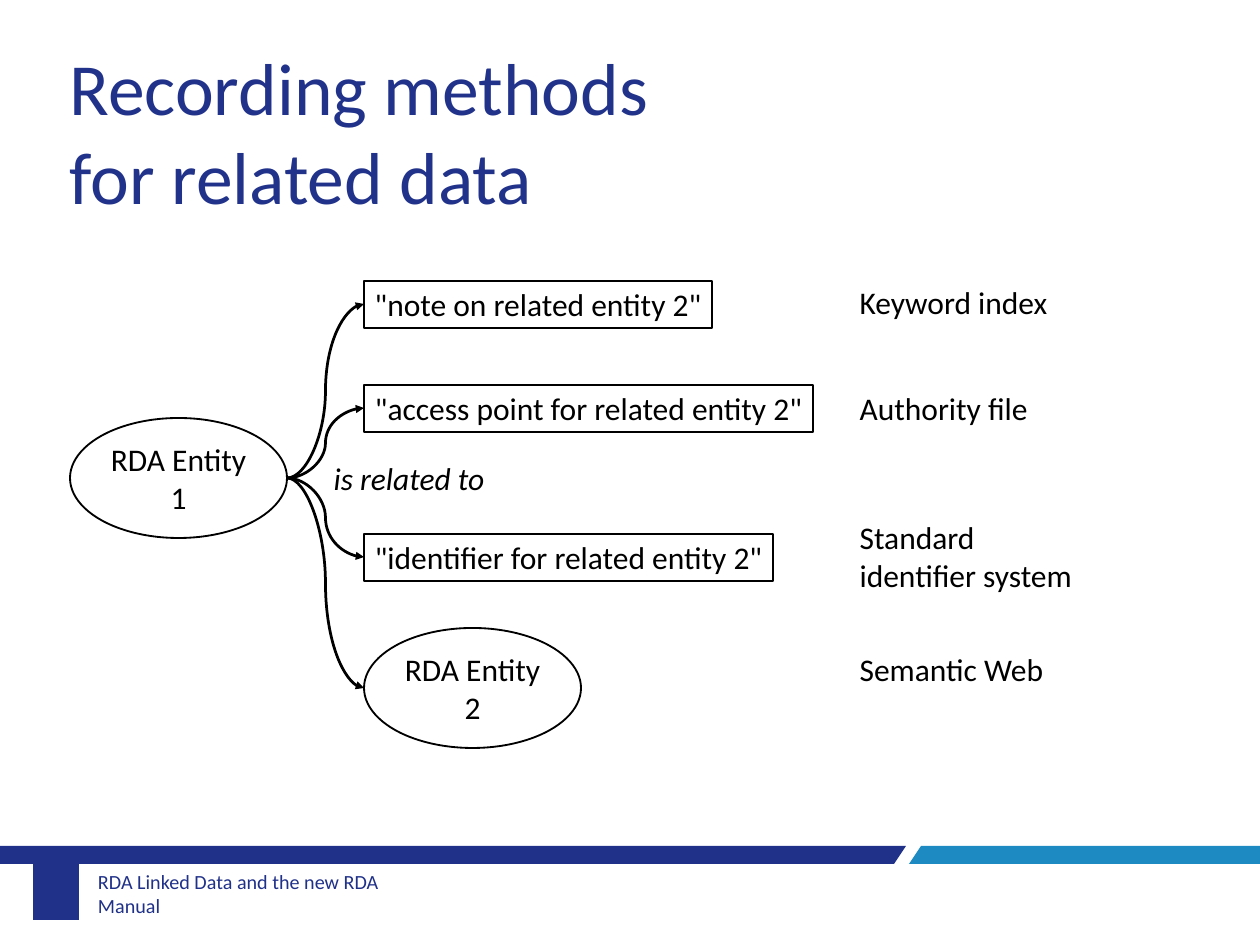
from dataclasses import dataclass

import pptx
import pptx.dml.color
import pptx.enum.shapes
import pptx.enum.text
import pptx.oxml
import pptx.oxml.ns
import pptx.util

EMU_PER_PX = 914400 / 88.2
SHAPE = pptx.enum.shapes.MSO_SHAPE
ALIGN = pptx.enum.text.PP_ALIGN
ANCHOR = pptx.enum.text.MSO_ANCHOR


@dataclass(frozen=True)
class Theme:
    font: str = "Calibri"
    navy: str = "203189"
    title_blue: str = "21328A"
    sky: str = "1D8BC1"
    black: str = "000000"
    title_size: float = 60
    body_size: float = 25.7
    footer_size: float = 16.4
    outline: float = 1.5
    arrow: float = 2.25


def px(n):
    return pptx.util.Emu(round(n * EMU_PER_PX))


def rgb(value):
    return pptx.dml.color.RGBColor.from_string(value)


class Deck:
    def __init__(self, theme, width, height):
        self.theme = theme
        self.prs = pptx.Presentation()
        self.prs.slide_width, self.prs.slide_height = px(width), px(height)
        self.s = self.prs.slides.add_slide(self.prs.slide_layouts[6])

    def set_text(self, sp, text, size=None, color=None, italic=False, align=ALIGN.LEFT):
        tf = sp.text_frame
        tf.text = text
        for p in tf.paragraphs:
            p.alignment = align
            for r in p.runs:
                r.font.name = self.theme.font
                r.font.size = pptx.util.Pt(size or self.theme.body_size)
                r.font.color.rgb = rgb(color or self.theme.black)
                r.font.italic = italic

    def label(self, x, y, w, h, text, **style):
        sp = self.s.shapes.add_textbox(px(x), px(y), px(w), px(h))
        sp.text_frame.word_wrap = True
        self.set_text(sp, text, **style)
        return sp

    def node(self, kind, x, y, w, h, text):
        """Add an outlined, unfilled shape with centred text."""
        sp = self.s.shapes.add_shape(kind, px(x), px(y), px(w), px(h))
        sp.shadow.inherit = False
        sp.fill.background()
        sp.line.color.rgb = rgb(self.theme.black)
        sp.line.width = pptx.util.Pt(self.theme.outline)
        sp.text_frame.word_wrap = False
        sp.text_frame.vertical_anchor = ANCHOR.TOP
        self.set_text(sp, text, align=ALIGN.CENTER)

    def band(self, points, color):
        """Add a filled polygon without an outline."""
        builder = self.s.shapes.build_freeform(*points[0], scale=EMU_PER_PX)
        builder.add_line_segments(points[1:], close=True)
        sp = builder.convert_to_shape()
        sp.shadow.inherit = False
        sp.fill.solid()
        sp.fill.fore_color.rgb = rgb(color)
        sp.line.fill.background()

    def curved_arrow(self, x1, y1, x2, y2):
        c = self.s.shapes.add_connector(
            pptx.enum.shapes.MSO_CONNECTOR.CURVE, px(x1), px(y1), px(x2), px(y2))
        c.line.color.rgb = rgb(self.theme.black)
        c.line.width = pptx.util.Pt(self.theme.arrow)
        ns = pptx.oxml.ns.nsdecls("a")
        sp_pr = c.element.spPr
        ln = sp_pr.find(pptx.oxml.ns.qn("a:ln"))
        ln.append(pptx.oxml.parse_xml(f'<a:tailEnd {ns} type="triangle"/>'))
        sp_pr.append(pptx.oxml.parse_xml(f"<a:effectLst {ns}/>"))


def main():
    theme = Theme()
    deck = Deck(theme, 1260, 945)

    top, bottom = 846, 864
    deck.band([(0, top), (906, top), (894, bottom), (0, bottom)], theme.navy)
    deck.band([(921, top), (1260, top), (1260, bottom), (909, bottom)], theme.sky)
    deck.band([(33, top), (79, top), (79, 920), (33, 920)], theme.navy)

    footer = deck.label(92, 869, 355, 49, "RDA Linked Data and the new RDA Manual",
                        size=theme.footer_size, color=theme.navy)
    tf = footer.text_frame
    tf.vertical_anchor = ANCHOR.MIDDLE
    tf.margin_left = tf.margin_right = px(6)
    tf.margin_top = tf.margin_bottom = px(4)

    deck.label(61, 38, 650, 187, "Recording methods for related data",
               size=theme.title_size, color=theme.title_blue)

    entity_w, entity_h = 217, 120
    entity1_x, entity1_y = 70, 418
    target_x, entity2_y = 364, 628
    deck.node(SHAPE.OVAL, entity1_x, entity1_y, entity_w, entity_h, "RDA Entity\n1")
    deck.node(SHAPE.OVAL, target_x, entity2_y, entity_w, entity_h, "RDA Entity\n2")

    row_h = 47
    methods = [
        (281, 348, '"note on related entity 2"'),
        (385, 449, '"access point for related entity 2"'),
        (534, 409, '"identifier for related entity 2"'),
    ]
    for y, w, text in methods:
        deck.node(SHAPE.RECTANGLE, target_x, y, w, row_h, text)

    start = entity1_x + entity_w, entity1_y + entity_h // 2
    ends = [y + row_h // 2 for y, _, _ in methods] + [entity2_y + entity_h // 2]
    for end_y in ends:
        deck.curved_arrow(*start, target_x, end_y)
    deck.label(325, 455, 170, row_h, "is related to", italic=True)

    uses = [
        (279, row_h, "Keyword index"),
        (385, row_h, "Authority file"),
        (514, 86, "Standard identifier system"),
        (646, row_h, "Semantic Web"),
    ]
    for y, h, text in uses:
        deck.label(851, y, 241, h, text)

    deck.prs.save("out.pptx")


if __name__ == "__main__":
    main()
